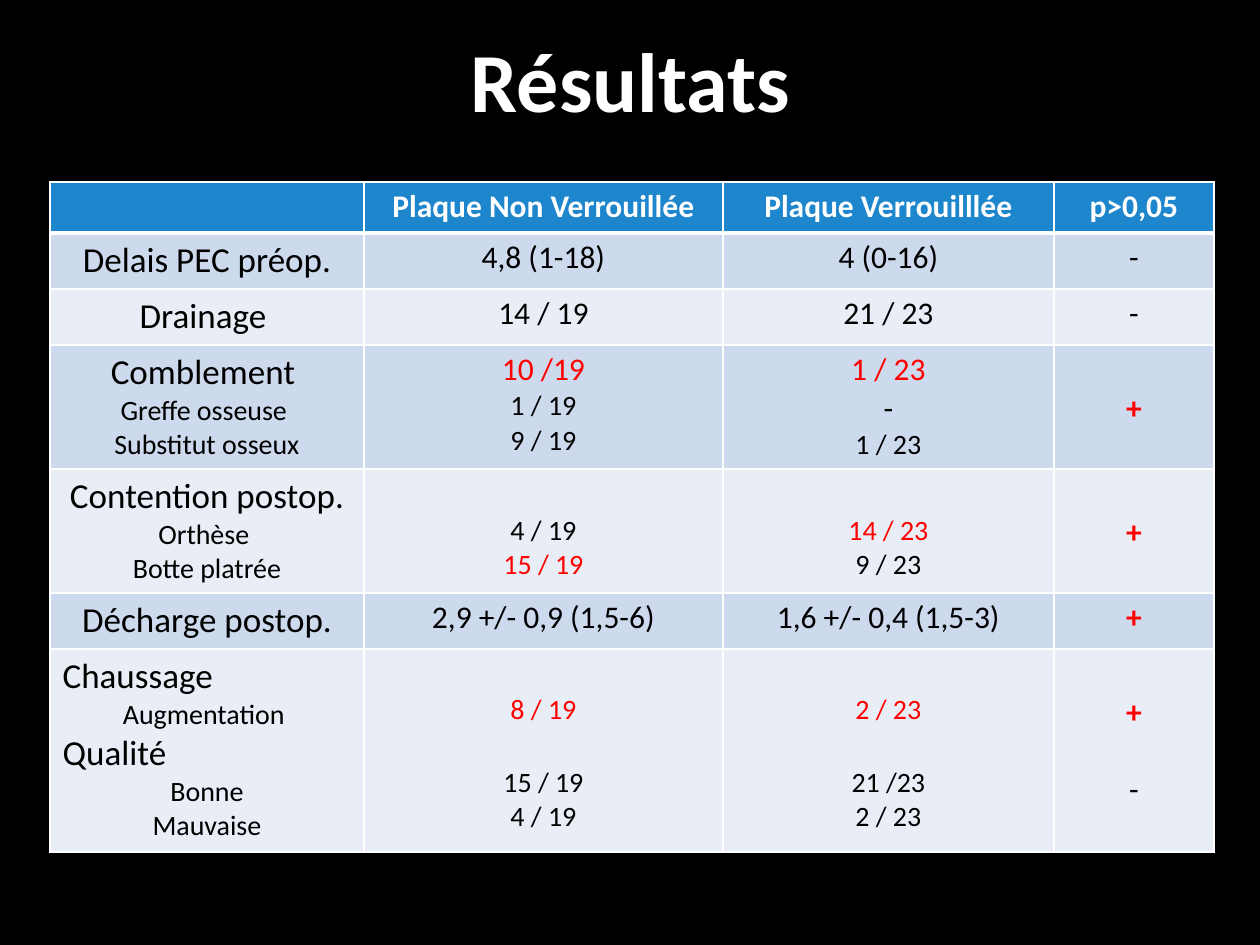
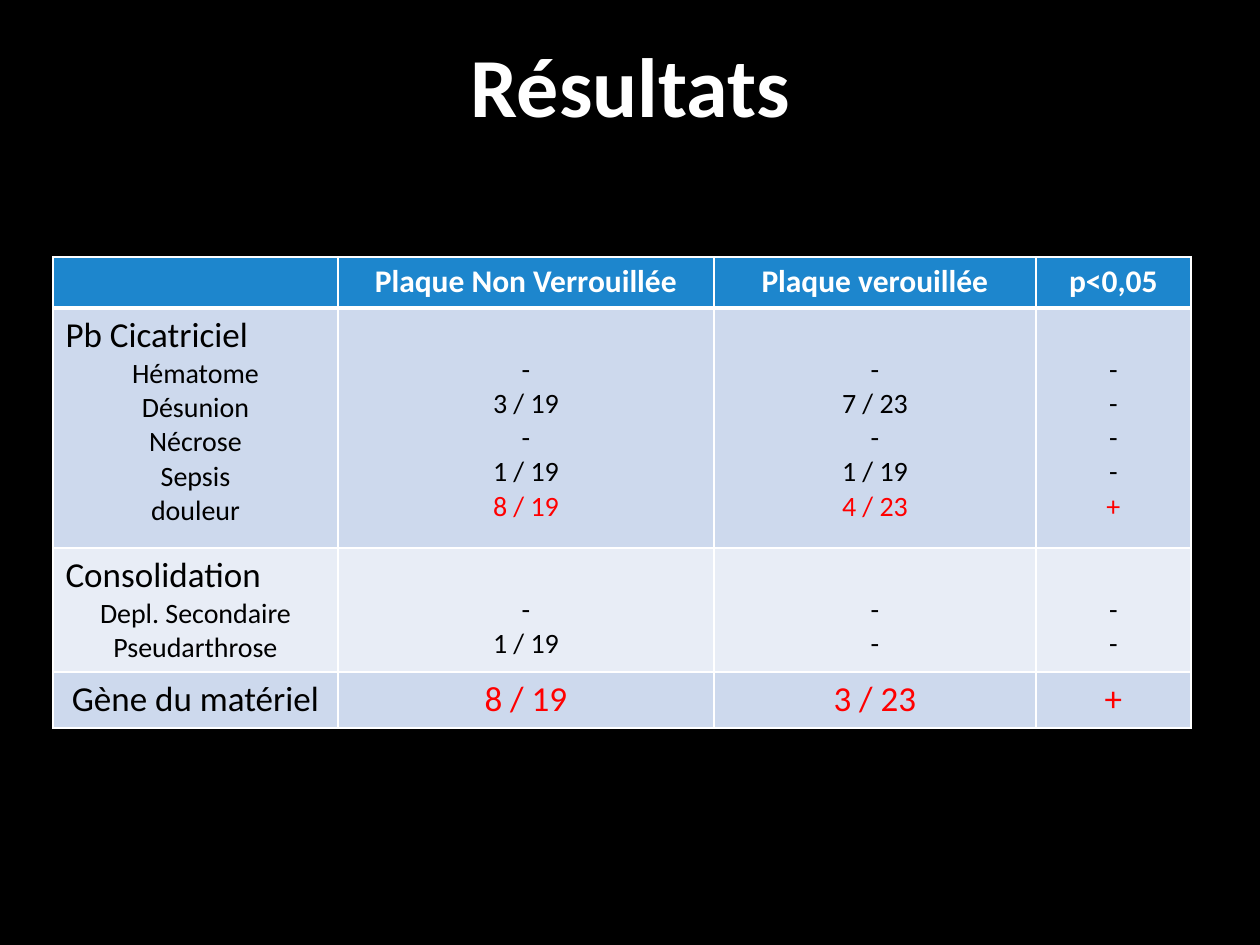
from lxml import etree
from pptx import Presentation
from pptx import util as u
from pptx.dml.color import RGBColor
from pptx.enum import text
from pptx.oxml.ns import qn

PX = 914400 / 126
HUE = {"back": "000000", "white": "FFFFFF", "ink": "000000", "red": "FF0000",
       "head": "1D86CD", "odd": "CDD9ED", "even": "E8EDF6"}
MID, LEFT = text.PP_ALIGN.CENTER, text.PP_ALIGN.LEFT
LOOK = {
    "title": (48, True, "white", MID),
    "head": (18, True, "white", MID),
    "left": (20, False, "ink", LEFT),
    "big": (20, False, "ink", MID),
    "bigred": (20, False, "red", MID),
    "mid": (18, False, "ink", MID),
    "midred": (18, False, "red", MID),
    "plus": (18, True, "red", MID),
    "sub": (16, False, "ink", MID),
    "subred": (16, False, "red", MID),
}
GAP = 22
PAD = 6

PAGES = [
    {"title": (95, 16, 1071, 125), "at": (50, 182), "cols": (314, 359, 331, 160), "rows": [
        (51, [[], ["head:Plaque Non Verrouillée"], ["head:Plaque Verrouilllée"], ["head:p>0,05"]]),
        (56, [["big:Delais PEC préop."], ["mid:4,8 (1-18)"], ["mid:4 (0-16)"], ["mid:-"]]),
        (56, [["big:Drainage "], ["mid:14 / 19"], ["mid:21 / 23"], ["mid:-"]]),
        (124, [["big:Comblement ", "sub:Greffe osseuse ", "sub:Substitut osseux"],
               ["midred:10 /19", "sub:1 / 19", "sub:9 / 19"],
               ["midred:1 / 23", "mid:-", "sub:1 / 23"],
               ["", "plus:+"]]),
        (124, [["big:Contention postop.", "sub:Orthèse ", "sub:Botte platrée"],
               ["", "sub:4 / 19", "subred:15 / 19"],
               ["", "subred:14 / 23", "sub:9 / 23"],
               ["", "plus:+"]]),
        (56, [["big:Décharge postop."], ["mid:2,9 +/- 0,9 (1,5-6)"],
              ["mid:1,6 +/- 0,4 (1,5-3)"], ["plus:+"]]),
        (203, [["left:Chaussage", "sub:Augmentation ", "left:Qualité", "sub:Bonne", "sub:Mauvaise"],
               ["", "subred:8 / 19", "", "sub:15 / 19", "sub:4 / 19"],
               ["", "subred:2 / 23", "", "sub:21 /23", "sub:2 / 23"],
               ["", "plus:+", "", "mid:-"]]),
    ]},
    {"title": (95, 16, 1071, 135), "at": (53, 257), "cols": (285, 376, 322, 155), "rows": [
        (51, [[], ["head:Plaque Non Verrouillée"], ["head:Plaque verouillée"], ["head:p<0,05"]]),
        (240, [["left:Pb Cicatriciel", "sub:Hématome", "sub:Désunion", "sub:Nécrose",
                "sub:Sepsis", "sub:douleur"],
               ["", "sub:-", "sub:3 / 19", "sub:-", "sub:1 / 19", "subred:8 / 19"],
               ["", "sub:-", "sub:7 / 23", "sub:-", "sub:1 / 19", "subred:4 / 23"],
               ["", "sub:-", "sub:-", "sub:-", "sub:-", "subred:+"]]),
        (124, [["left:Consolidation", "sub:Depl. Secondaire", "sub:Pseudarthrose"],
               ["", "sub:-", "sub:1 / 19"], ["", "sub:-", "sub:-"], ["", "sub:-", "sub:-"]]),
        (56, [["big:Gène du matériel"], ["bigred:8 / 19"], ["bigred:3 / 23"], ["bigred:+"]]),
    ]},
]


def px(n):
    return round(n * PX)


def write(para, words, look):
    size, bold, hue, side = LOOK[look]
    run = para.add_run()
    run.text = words
    para.alignment = side
    for key, val in {"name": "Calibri", "size": u.Pt(size), "bold": bold}.items():
        setattr(run.font, key, val)
    run.font.color.rgb = RGBColor.from_string(HUE[hue])


deck = Presentation()
deck.slide_width, deck.slide_height = px(1260), px(945)
back = deck.slide_master.background.fill
back.solid()
back.fore_color.rgb = RGBColor.from_string(HUE["back"])

for page in PAGES:
    slide = deck.slides.add_slide(deck.slide_layouts[5])
    title = slide.shapes.title
    for key, val in zip(("left", "top", "width", "height"), page["title"]):
        setattr(title, key, px(val))
    frame = title.text_frame
    frame.auto_size = text.MSO_AUTO_SIZE.NONE
    frame.vertical_anchor = text.MSO_ANCHOR.MIDDLE
    write(frame.paragraphs[0], "Résultats", "title")

    rows, cols = page["rows"], page["cols"]
    high = sum(row[0] for row in rows)
    spot = [px(n) for n in (*page["at"], sum(cols), high)]
    grid = slide.shapes.add_table(len(rows), len(cols), *spot).table
    for col, wide in zip(grid.columns, cols):
        col.width = px(wide)

    for r, (tall, cells) in enumerate(rows):
        grid.rows[r].height = px(tall)
        band = "head" if r == 0 else "odd" if r % 2 else "even"
        for c, lines in enumerate(cells):
            cell = grid.cell(r, c)
            cell.fill.solid()
            cell.fill.fore_color.rgb = RGBColor.from_string(HUE[band])
            skip = bool(lines) and not lines[0]
            cell.margin_top = px(PAD) + (u.Pt(GAP) if skip else 0)
            cell.margin_bottom = px(PAD)

            para, blank = None, False
            for line in lines:
                if not line:
                    blank = True
                    continue
                first = para is None
                para = cell.text_frame.paragraphs[0] if first else cell.text_frame.add_paragraph()
                if blank and not first:
                    para.space_before = u.Pt(GAP)
                blank = False
                look, words = line.split(":")
                write(para, words, look)

            prop = cell._tc.get_or_add_tcPr()
            for n, edge in enumerate(("lnL", "lnR", "lnT", "lnB")):
                thick = 3 if (r, edge) in ((0, "lnB"), (1, "lnT")) else 1
                rule = etree.Element(qn("a:" + edge), w=str(u.Pt(thick)))
                fill = etree.SubElement(rule, qn("a:solidFill"))
                etree.SubElement(fill, qn("a:srgbClr"), val=HUE["white"])
                prop.insert(n, rule)

deck.save("out.pptx")
